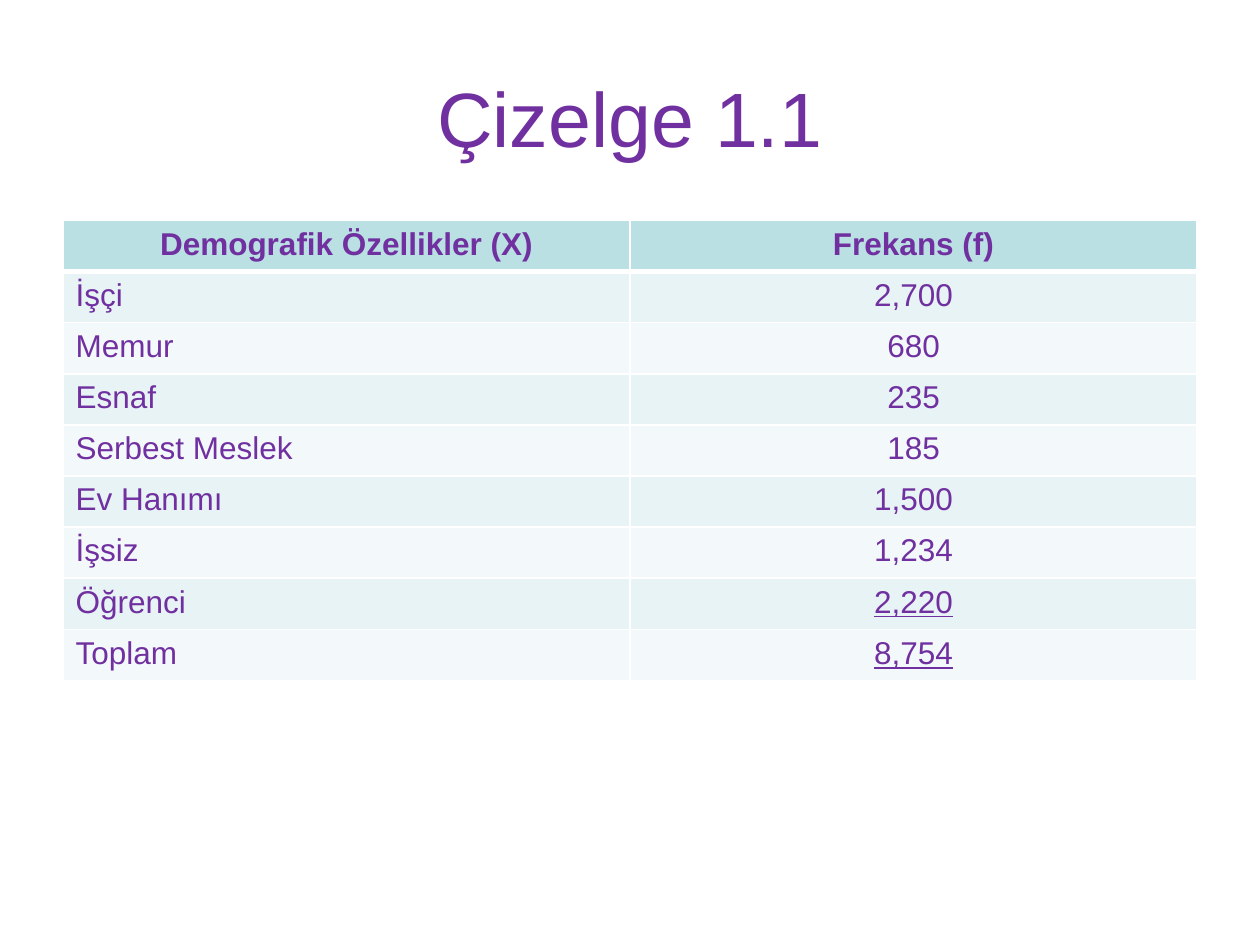
"""Build a slide with a frequency table of demographic groups."""
from dataclasses import dataclass

from lxml.etree import SubElement
from pptx import Presentation
from pptx.dml.color import RGBColor
from pptx.enum.text import MSO_ANCHOR, PP_ALIGN
from pptx.oxml.ns import qn
from pptx.util import Inches, Pt


@dataclass(frozen=True)
class Theme:
    font: str = "Arial"
    text: str = "7030A0"
    header: str = "BBE0E3"
    bands: tuple = ("E7F3F4", "F3F9FA")
    border: str = "FFFFFF"
    title_size: int = 44
    table_size: int = 18
    thin: int = 1
    thick: int = 3


class PageBuilder:
    def __init__(self, page, theme):
        self.page = page
        self.theme = theme

    def set_text(self, para, text, size, align, bold=False, underline=False):
        para.text = text
        para.alignment = align
        font = para.font
        font.name = self.theme.font
        font.size = Pt(size)
        font.bold = bold
        font.underline = underline
        font.color.rgb = RGBColor.from_string(self.theme.text)

    def title(self, text, left, top, width, height):
        box = self.page.shapes.add_textbox(left, top, width, height)
        frame = box.text_frame
        frame.word_wrap = True
        frame.vertical_anchor = MSO_ANCHOR.MIDDLE
        self.set_text(frame.paragraphs[0], text, self.theme.title_size, PP_ALIGN.CENTER)

    def border(self, cell, side, points):
        properties = cell._tc.get_or_add_tcPr()
        line = SubElement(properties, qn(f"a:ln{side}"), w=str(Pt(points)))
        fill = SubElement(line, qn("a:solidFill"))
        SubElement(fill, qn("a:srgbClr"), val=self.theme.border)

    def table(self, rows, underlined, left, top, width, height):
        theme = self.theme
        shape = self.page.shapes.add_table(len(rows), len(rows[0]), left, top, width, height)
        for row_index, row in enumerate(rows):
            header = row_index == 0
            color = theme.header if header else theme.bands[(row_index - 1) % 2]
            for column_index, text in enumerate(row):
                cell = shape.table.cell(row_index, column_index)
                for side in "LRTB":
                    header_edge = (side == "B" and header) or (side == "T" and row_index == 1)
                    self.border(cell, side, theme.thick if header_edge else theme.thin)
                cell.fill.solid()
                cell.fill.fore_color.rgb = RGBColor.from_string(color)
                centered = header or column_index > 0
                align = PP_ALIGN.CENTER if centered else PP_ALIGN.LEFT
                para = cell.text_frame.paragraphs[0]
                self.set_text(para, text, theme.table_size, align, header, text in underlined)


def main():
    deck = Presentation()
    deck.slide_width, deck.slide_height = Inches(10), Inches(7.5)
    page = deck.slides.add_slide(deck.slide_layouts[6])
    builder = PageBuilder(page, Theme())
    builder.title("Çizelge 1.1", Inches(0.5), Inches(0.3), Inches(9), Inches(1.25))
    frequencies = [
        ("Demografik Özellikler (X)", "Frekans (f)"),
        ("İşçi", "2,700"),
        ("Memur", "680"),
        ("Esnaf", "235"),
        ("Serbest Meslek", "185"),
        ("Ev Hanımı", "1,500"),
        ("İşsiz", "1,234"),
        ("Öğrenci", "2,220"),
        ("Toplam", "8,754"),
    ]
    builder.table(frequencies, {"2,220", "8,754"},
                  Inches(0.5), Inches(1.75), Inches(9), Inches(3.65))
    deck.save("out.pptx")


if __name__ == "__main__":
    main()
